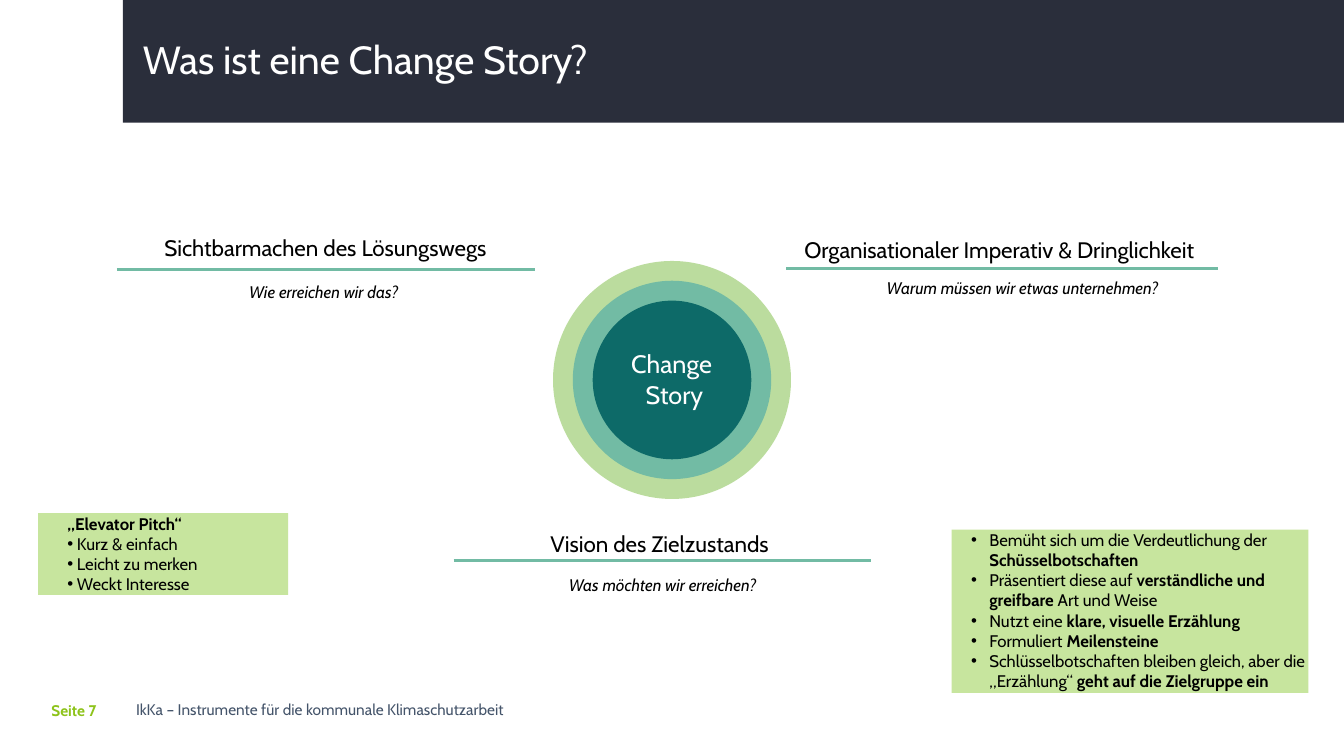
import lxml.etree
import pptx
import pptx.dml.color
import pptx.enum.shapes
import pptx.enum.text
import pptx.oxml.ns
import pptx.util

Pt = pptx.util.Pt
RGB = pptx.dml.color.RGBColor.from_string
Kind = pptx.enum.shapes.MSO_SHAPE
Align = pptx.enum.text.PP_ALIGN
Anchor = pptx.enum.text.MSO_ANCHOR
qn = pptx.oxml.ns.qn


class Theme:
    font = "Cabin"
    # Colours
    navy, slate, lime = "2A2E3B", "44546A", "8DC31A"
    pale, mint, teal, note = "BBDC9E", "72BBA4", "0D6A68", "C7E59E"
    white, black = "FFFFFF", "000000"
    # Type sizes
    title, core, head, body, foot = 28, 18, 16, 12, 11


deck = pptx.Presentation()
deck.slide_width, deck.slide_height = Pt(960), Pt(540)
slide = deck.slides.add_slide(deck.slide_layouts[6])
shapes = slide.shapes


def draw(kind, place, fill):
    """Add a flat shape without outline."""
    shape = shapes.add_shape(kind, *map(Pt, place))
    shape.shadow.inherit = False
    shape.fill.solid()
    shape.fill.fore_color.rgb = RGB(fill)
    shape.line.fill.background()
    return shape


def write(lines, size, color, place=None, shape=None, align=Align.LEFT,
          inset=(0, 0), italic=False):
    """Fill a shape or a new text box; each line is a list of (text, bold)."""
    shape = shape or shapes.add_textbox(*map(Pt, place))
    frame = shape.text_frame
    frame.word_wrap = True
    frame.vertical_anchor = Anchor.TOP
    frame.margin_left = frame.margin_right = Pt(inset[0])
    frame.margin_top = frame.margin_bottom = Pt(inset[1])
    for i, line in enumerate(lines):
        para = frame.add_paragraph() if i else frame.paragraphs[0]
        para.alignment = align
        for text, bold in line:
            for n, part in enumerate(text.split("\n")):
                if n:
                    para.add_line_break()
                run = para.add_run()
                run.text = part
                font = run.font
                font.name, font.size = Theme.font, Pt(size)
                font.bold, font.italic = bold, italic
                font.color.rgb = RGB(color)
    return frame


# Title band
draw(Kind.RECTANGLE, (87.7, 0, 872.3, 87.7), Theme.navy)
title = write([[("Was ist eine Change Story?", False)]], Theme.title, Theme.white,
              (95, 25.2, 828, 44), inset=(7.2, 3.6))
title.paragraphs[0].line_spacing = 0.9

# Footer
write([[("IkKa – Instrumente für die kommunale Klimaschutzarbeit", False)]],
      Theme.foot, Theme.slate, (97.2, 500.4, 401, 14))
write([[("Seite 7", True)]], Theme.foot, Theme.lime, (36.7, 500.8, 52.6, 17))

# Rings around the core
mid_x, mid_y = 480, 271.4
for size, fill in ((170, Theme.pale), (141.7, Theme.mint), (113.3, Theme.teal)):
    draw(Kind.OVAL, (mid_x - size / 2, mid_y - size / 2, size, size), fill)
write([[("Change\n Story", False)]], Theme.core, Theme.white,
      (408.4, 245.5, 142.6, 51), align=Align.CENTER, inset=(7.2, 3.6))

# Three themes: heading, question and rule (left, right, height)
themes = [
    ("Vision des Zielzustands ", (334.8, 378.7, 276.5, 19.4), Align.CENTER,
     "Was möchten wir erreichen?", (365, 410.4, 216.7, 14.4), (324, 622.5, 400.3)),
    ("Sichtbarmachen des Lösungswegs", (94.3, 167, 276.5, 19.4), Align.CENTER,
     "Wie erreichen wir das? ", (143.3, 201.6, 178.6, 14.4), (83.5, 382, 192.4)),
    ("Organisationaler Imperativ & Dringlichkeit", (574.6, 168.5, 308, 19.4), Align.LEFT,
     "Warum müssen wir etwas unternehmen? ", (626.4, 198.3, 211, 14.4), (561.5, 870, 191.7)),
]
for head, spot, align, ask, under, (left, right, y) in themes:
    write([[(head, False)]], Theme.head, Theme.black, spot, align=align)
    write([[(ask, False)]], Theme.body, Theme.black, under,
          align=Align.CENTER, italic=True)
    rule = shapes.add_connector(pptx.enum.shapes.MSO_CONNECTOR.STRAIGHT,
                                Pt(left), Pt(y), Pt(right), Pt(y))
    rule.line.color.rgb = RGB(Theme.mint)
    rule.line.width = Pt(2)
    lxml.etree.SubElement(rule._element.spPr, qn("a:effectLst"))

# Green notes: place, margin, indent, first bulleted line, lines
notes = [
    ((27.2, 366.6, 178.6, 58.3), 22.3, -1.4, 1, [
        [("„Elevator Pitch“", True)],
        [(" Kurz & einfach", False)],
        [(" Leicht zu merken", False)],
        [(" Weckt Interesse", False)],
    ]),
    ((679.7, 378.3, 255, 116.6), 27, -13, 0, [
        [("Bemüht sich um die Verdeutlichung der ", False), ("Schüsselbotschaften", True)],
        [("Präsentiert diese auf ", False), ("verständliche und greifbare ", True),
         ("Art und Weise", False)],
        [("Nutzt eine ", False), ("klare, visuelle Erzählung", True)],
        [("Formuliert", False), (" Meilensteine", True)],
        [("Schlüsselbotschaften bleiben gleich, aber die „Erzählung“ ", False),
         ("geht auf die Zielgruppe ein", True)],
    ]),
]
for place, margin, indent, first, lines in notes:
    card = draw(Kind.RECTANGLE, place, Theme.note)
    frame = write(lines, Theme.body, Theme.black, shape=card)
    for i, para in enumerate(frame.paragraphs):
        props = para._p.get_or_add_pPr()
        props.set("marL", str(Pt(margin)))
        props.set("indent", str(Pt(indent)))
        if i >= first:
            lxml.etree.SubElement(props, qn("a:buFont"), typeface="Arial")
            lxml.etree.SubElement(props, qn("a:buChar"), char="•")

deck.save("out.pptx")
